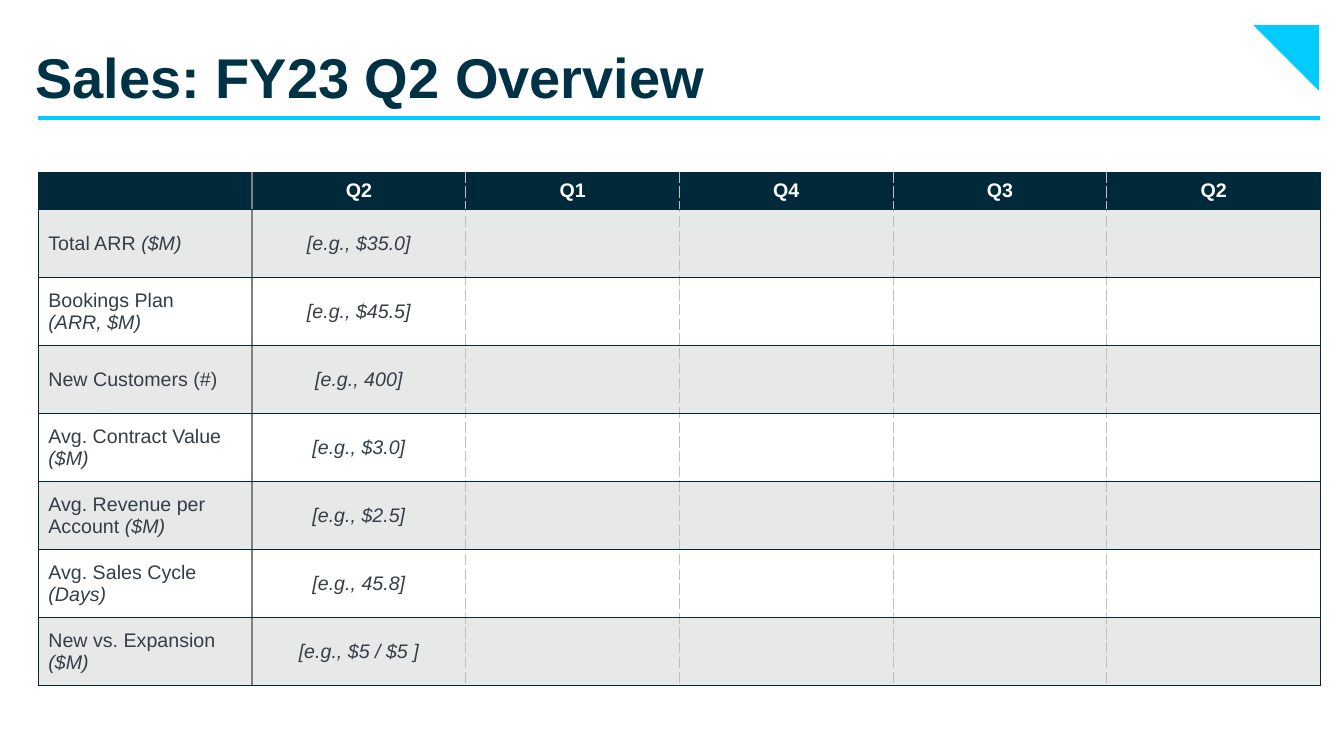
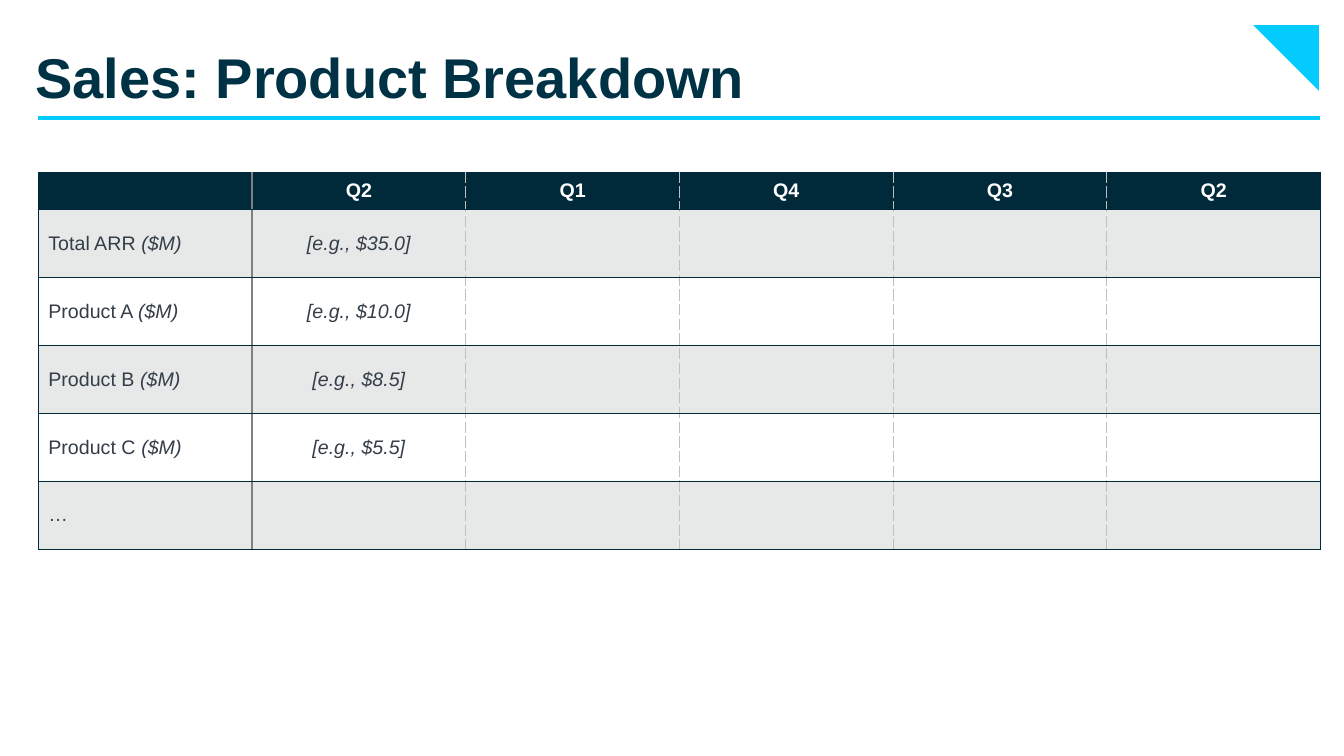
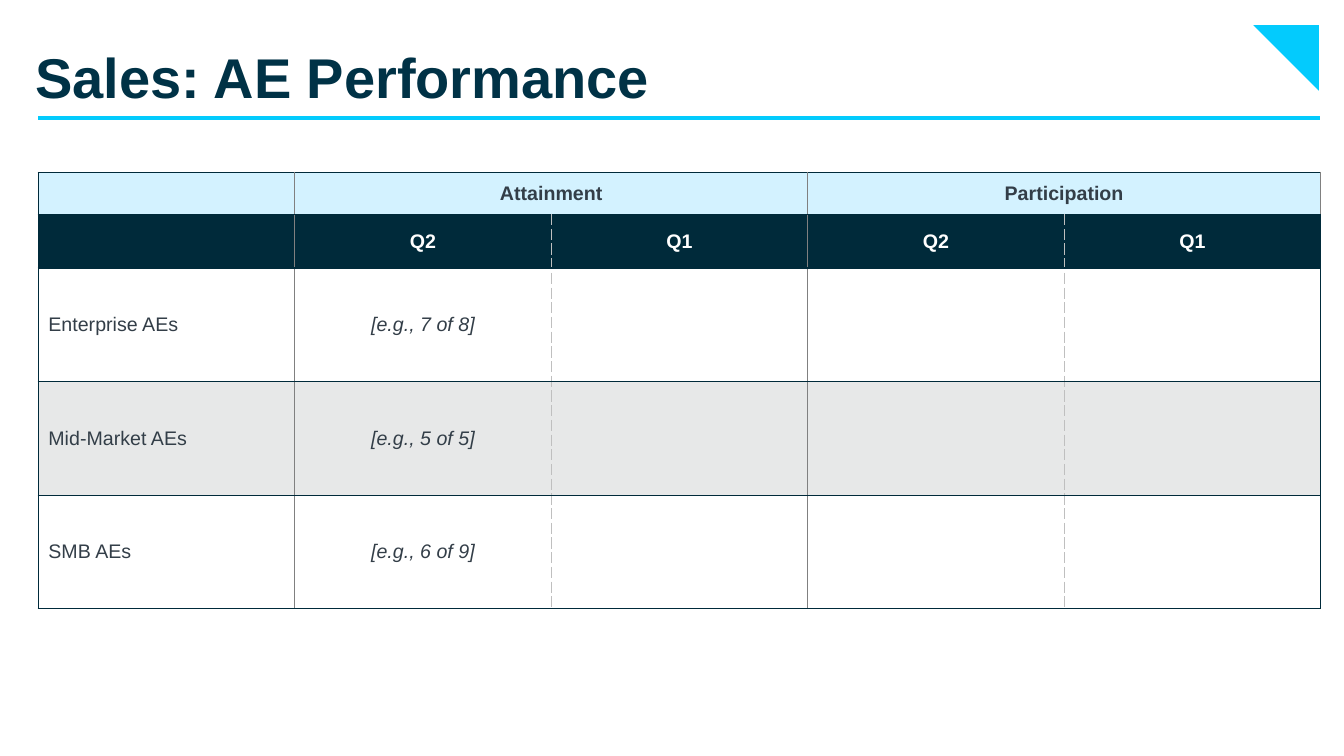
"""Build three quarterly sales review slides with metric tables."""
from dataclasses import dataclass
from typing import Any

from lxml import etree
from pptx import Presentation
from pptx.dml.color import RGBColor
from pptx.enum.shapes import MSO_CONNECTOR, MSO_SHAPE
from pptx.enum.text import MSO_ANCHOR, PP_ALIGN
from pptx.oxml.ns import qn
from pptx.util import Inches, Pt

RIGHT_TRIANGLE = MSO_SHAPE.RIGHT_TRIANGLE
STRAIGHT = MSO_CONNECTOR.STRAIGHT
TOP, MIDDLE = MSO_ANCHOR.TOP, MSO_ANCHOR.MIDDLE
LEFT, CENTER = PP_ALIGN.LEFT, PP_ALIGN.CENTER

FONT = "Arial"
CYAN, PALE_CYAN = "03CBFD", "D3F2FF"
NAVY, TITLE_NAVY, SLATE = "002A3A", "003246", "333E48"
WHITE, STRIPE = "FFFFFF", "E7E8E8"
GREY, LIGHT_GREY = "808080", "BFBFBF"

TABLE_LEFT, TABLE_TOP, TABLE_WIDTH = 0.38, 1.71, 12.72
TITLE_BOX = {"left": Inches(0.25), "top": Inches(0.25),
             "width": Inches(12.84), "height": Inches(1.18)}
TITLE_FRAME = {"margin_left": Inches(0.1), "margin_right": Inches(0.1),
               "margin_top": Inches(0.17), "margin_bottom": Inches(0.1),
               "vertical_anchor": TOP, "word_wrap": True}
TITLE_FONT = {"name": FONT, "size": Pt(40), "bold": True}
CELL_FORMAT = {"vertical_anchor": MIDDLE, "margin_left": Inches(0.1),
               "margin_right": Inches(0.1), "margin_top": Inches(0.03),
               "margin_bottom": Inches(0.03)}
CELL_FONT = {"name": FONT, "size": Pt(14)}


@dataclass(frozen=True)
class Border:
    """Colour and dash of a cell edge."""
    color: str
    dash: str = "solid"


EDGE, DIVIDER, QUARTER = Border(NAVY), Border(GREY), Border(LIGHT_GREY, "lgDash")


@dataclass(frozen=True)
class Heading:
    """A heading row of a table; each label covers span columns."""
    labels: tuple[str, ...]
    height: float
    fill: str = NAVY
    color: str = WHITE
    span: int = 1


@dataclass(frozen=True)
class Metric:
    """A body row: name, italic unit and sample value."""
    name: str
    unit: str = ""
    example: str = ""
    unit_below: bool = False


@dataclass(frozen=True)
class SalesPage:
    """The title and table of one slide."""
    title: str
    table_height: float
    headings: tuple[Heading, ...]
    metrics: tuple[Metric, ...]
    group_size: int
    stripes: tuple[str, str] = (STRIPE, WHITE)


FIVE_QUARTERS = (Heading(("Q2", "Q1", "Q4", "Q3", "Q2"), 0.37),)
PAGES = (
    SalesPage("Sales: FY23 Q2 Overview", 5.09, FIVE_QUARTERS, (
        Metric("Total ARR ", "($M)", "[e.g., $35.0]"),
        Metric("Bookings Plan", "(ARR, $M)", "[e.g., $45.5]", True),
        Metric("New Customers (#)", "", "[e.g., 400]"),
        Metric("Avg. Contract Value ", "($M)", "[e.g., $3.0]"),
        Metric("Avg. Revenue per Account ", "($M)", "[e.g., $2.5]"),
        Metric("Avg. Sales Cycle ", "(Days)", "[e.g., 45.8]"),
        Metric("New vs. Expansion", "($M)", "[e.g., $5 / $5 ]", True),
    ), 5),
    SalesPage("Sales: Product Breakdown", 3.74, FIVE_QUARTERS, (
        Metric("Total ARR ", "($M)", "[e.g., $35.0]"),
        Metric("Product A ", "($M)", "[e.g., $10.0]"),
        Metric("Product B ", "($M)", "[e.g., $8.5]"),
        Metric("Product C ", "($M)", "[e.g., $5.5]"),
        Metric("…"),
    ), 5),
    SalesPage("Sales: AE Performance", 4.33, (
        Heading(("Attainment", "Participation"), 0.42, PALE_CYAN, SLATE, 2),
        Heading(("Q2", "Q1", "Q2", "Q1"), 0.53),
    ), (
        Metric("Enterprise AEs", "", "[e.g., 7 of 8]"),
        Metric("Mid-Market AEs", "", "[e.g., 5 of 5]"),
        Metric("SMB AEs", "", "[e.g., 6 of 9]"),
    ), 2, (WHITE, STRIPE)),
)


def rgb(color: str) -> RGBColor:
    """Turn a hex string into a colour."""
    return RGBColor.from_string(color)


def apply(target: Any, values: dict[str, Any]) -> None:
    """Set each named format value on the target."""
    for name, value in values.items():
        setattr(target, name, value)


def add_run(paragraph: Any, text: str, color: str, font: dict[str, Any]) -> None:
    """Append formatted text to a paragraph."""
    run = paragraph.add_run()
    run.text = text
    apply(run.font, font)
    run.font.color.rgb = rgb(color)


def add_corner(slide: Any, master: Any) -> None:
    """Draw the corner triangle and place it on the master."""
    corner = slide.shapes.add_shape(
        RIGHT_TRIANGLE, Inches(12.43), Inches(0.25), Inches(0.65), Inches(0.65))
    corner.rotation = 180
    corner.shadow.inherit = False
    corner.fill.solid()
    corner.fill.fore_color.rgb = rgb(CYAN)
    corner.line.fill.background()
    master.shapes.element.append(corner.element)


def add_title(slide: Any, text: str) -> None:
    """Fill the title placeholder and underline it."""
    title = slide.shapes.title
    apply(title, TITLE_BOX)
    apply(title.text_frame, TITLE_FRAME)
    paragraph = title.text_frame.paragraphs[0]
    paragraph.alignment = LEFT
    paragraph.line_spacing = 1.0
    add_run(paragraph, text, TITLE_NAVY, TITLE_FONT)
    rule = slide.shapes.add_connector(
        STRAIGHT, Inches(0.38), Inches(1.17), Inches(13.09), Inches(1.17))
    rule.line.color.rgb = rgb(CYAN)
    rule.line.width = Pt(3)
    etree.SubElement(rule.element.find(qn("p:spPr")), qn("a:effectLst"))


def style_cell(cell: Any, fill: str, left: Border, right: Border) -> None:
    """Set the borders, margins and fill of a cell."""
    properties = cell._tc.get_or_add_tcPr()
    edges = {"lnL": left, "lnR": right, "lnT": EDGE, "lnB": EDGE}
    for tag, border in edges.items():
        line = etree.SubElement(properties, qn(f"a:{tag}"), w=str(Pt(1)))
        solid = etree.SubElement(line, qn("a:solidFill"))
        etree.SubElement(solid, qn("a:srgbClr"), val=border.color)
        etree.SubElement(line, qn("a:prstDash"), val=border.dash)
    apply(cell, CELL_FORMAT)
    cell.fill.solid()
    cell.fill.fore_color.rgb = rgb(fill)


def style_row(table: Any, row: int, fill: str, borders: list[Border]) -> None:
    """Style the cells of a row between its vertical borders."""
    for column, (left, right) in enumerate(zip(borders, borders[1:])):
        style_cell(table.cell(row, column), fill, left, right)


def write_centered(cell: Any, text: str, color: str, **emphasis: bool) -> None:
    """Write one centred line in a cell."""
    paragraph = cell.text_frame.paragraphs[0]
    paragraph.alignment = CENTER
    add_run(paragraph, text, color, CELL_FONT | emphasis)


def write_metric(table: Any, row: int, metric: Metric) -> None:
    """Write the name, unit and sample value of a metric."""
    frame = table.cell(row, 0).text_frame
    paragraph = frame.paragraphs[0]
    add_run(paragraph, metric.name, SLATE, CELL_FONT | {"bold": False})
    if metric.unit:
        if metric.unit_below:
            paragraph = frame.add_paragraph()
        add_run(paragraph, metric.unit, SLATE, CELL_FONT | {"bold": False, "italic": True})
    if metric.example:
        write_centered(table.cell(row, 1), metric.example, SLATE, bold=False, italic=True)


def add_metric_table(slide: Any, page: SalesPage) -> None:
    """Draw the table of a page."""
    quarters = len(page.headings[-1].labels)
    head_count = len(page.headings)
    table = slide.shapes.add_table(
        head_count + len(page.metrics), quarters + 1, Inches(TABLE_LEFT),
        Inches(TABLE_TOP), Inches(TABLE_WIDTH), Inches(page.table_height)).table
    apply(table, {"first_row": False, "horz_banding": False})
    for column in table.columns:
        column.width = Inches(TABLE_WIDTH / (quarters + 1))
    body = page.table_height - sum(heading.height for heading in page.headings)
    heights = [heading.height for heading in page.headings]
    heights += [body / len(page.metrics)] * len(page.metrics)
    for row, height in zip(table.rows, heights):
        row.height = Inches(height)

    inner = [QUARTER if index % page.group_size else DIVIDER for index in range(quarters)]
    borders = [EDGE, *inner, EDGE]
    for row, heading in enumerate(page.headings):
        grouped = heading.span > 1
        style_row(table, row, heading.fill,
                  [EDGE] + [DIVIDER] * (quarters + 1) if grouped else borders)
        for index, label in enumerate(heading.labels):
            first = 1 + index * heading.span
            cell = table.cell(row, first)
            if grouped:
                cell.merge(table.cell(row, first + heading.span - 1))
            write_centered(cell, label, heading.color, bold=True)
    for index, metric in enumerate(page.metrics):
        row = head_count + index
        style_row(table, row, page.stripes[index % 2], borders)
        write_metric(table, row, metric)


def main() -> None:
    """Build and save the presentation."""
    deck = Presentation()
    apply(deck, {"slide_width": Inches(13.33), "slide_height": Inches(7.5)})
    for number, page in enumerate(PAGES):
        slide = deck.slides.add_slide(deck.slide_layouts[5])
        if number == 0:
            add_corner(slide, deck.slide_master)
        add_title(slide, page.title)
        add_metric_table(slide, page)
    deck.save("out.pptx")


if __name__ == "__main__":
    main()
